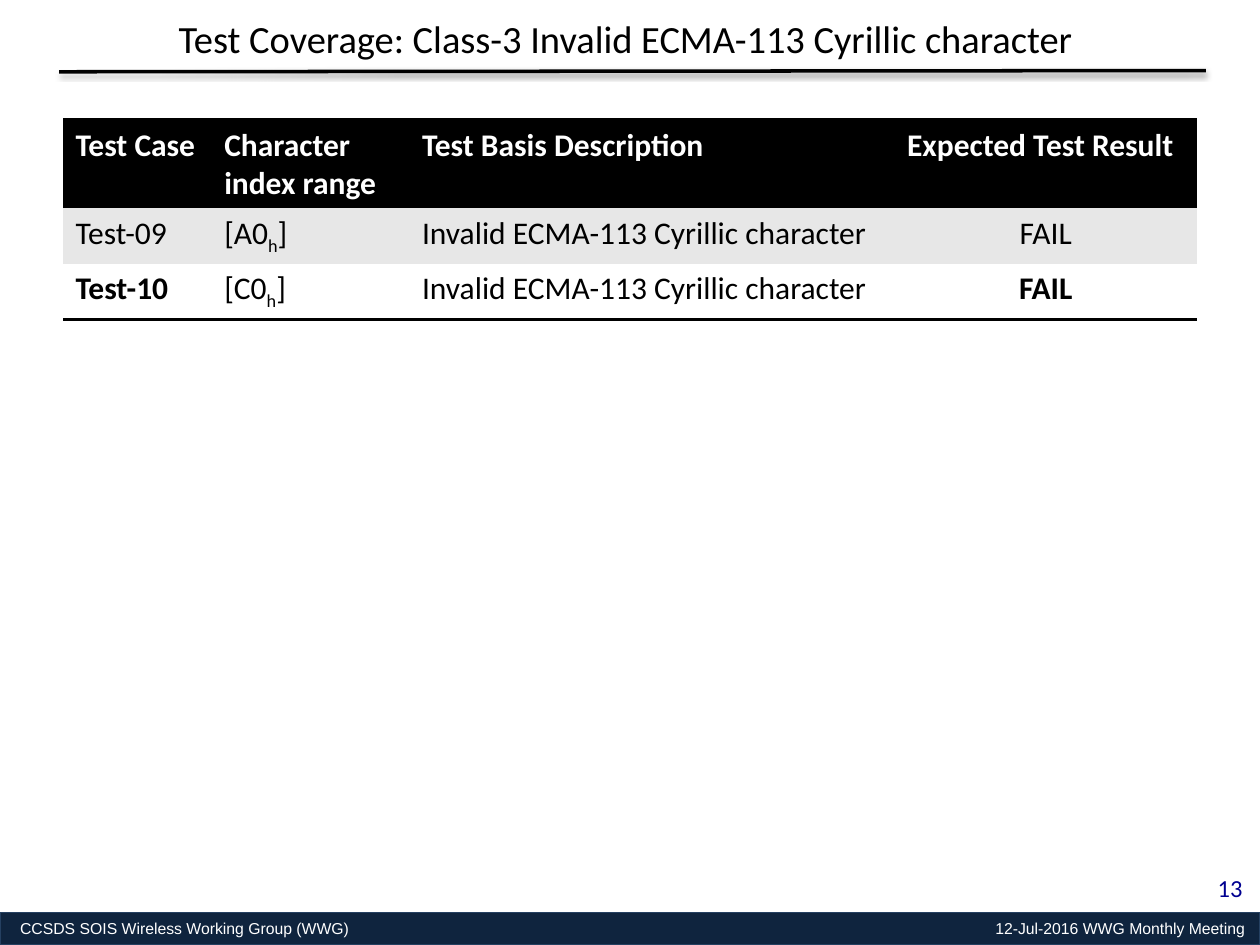
from dataclasses import dataclass

from lxml import etree
from pptx import Presentation
from pptx import util as u
from pptx.dml.color import RGBColor
from pptx.enum import shapes, text
from pptx.oxml import parse_xml
from pptx.oxml.ns import nsdecls, qn

BLACK = RGBColor(0x00, 0x00, 0x00)
WHITE = RGBColor(0xFF, 0xFF, 0xFF)
BAND = RGBColor(0xE7, 0xE7, 0xE7)
NAVY = RGBColor(0x0F, 0x24, 0x3E)
NAVY_EDGE = RGBColor(0x25, 0x40, 0x61)
PAGE_BLUE = RGBColor(0x00, 0x00, 0x90)
NO_GRID_STYLE = "{2D5ABB26-0587-4C30-8999-92F81FD0307C}"


@dataclass
class TestCase:
    name: str
    code: str
    basis: str
    result: str
    fill: RGBColor
    emphasised: bool = False


HEADERS = ["Test Case", "Character index range", "Test Basis Description",
           "Expected Test Result"]
CASES = [
    TestCase("Test-09", "A0", "Invalid ECMA-113 Cyrillic character", "FAIL", BAND),
    TestCase("Test-10", "C0", "Invalid ECMA-113 Cyrillic character", "FAIL", WHITE, True),
]
COL_WIDTHS = [1.18, 1.57, 3.85, 2.4]
ROW_HEIGHT = 0.41


def add_run(p, words: str, size: float, color: RGBColor, bold: bool = False,
            font: str = "Calibri"):
    r = p.add_run()
    r.text = words
    r.font.name, r.font.size, r.font.bold = font, u.Pt(size), bold
    r.font.color.rgb = color
    return r


def fill_cell(cell, fill: RGBColor):
    cell.fill.solid()
    cell.fill.fore_color.rgb = fill
    return cell.text_frame.paragraphs[0]


def add_border(cell, side: str) -> None:
    cell._tc.get_or_add_tcPr().insert(0, parse_xml(
        f'<a:{side} {nsdecls("a")} w="{u.Pt(2)}"><a:solidFill>'
        f'<a:srgbClr val="{BLACK}"/></a:solidFill></a:{side}>'))


def add_footer(slide) -> None:
    sp = slide.shapes.add_shape(shapes.MSO_SHAPE.RECTANGLE, u.Inches(0), u.Inches(7.24),
                                u.Inches(10), u.Inches(0.26))
    sp.shadow.inherit = False
    sp.fill.solid()
    sp.fill.fore_color.rgb = NAVY
    sp.line.color.rgb = NAVY_EDGE
    sp.line.width = u.Pt(0.75)
    tf = sp.text_frame
    tf.margin_left, tf.margin_right = u.Inches(0.16), u.Inches(0.11)
    tf.margin_top = tf.margin_bottom = u.Inches(0.06)
    p = tf.paragraphs[0]
    p.alignment = text.PP_ALIGN.LEFT
    # A right tab carries the meeting name to the far edge
    tabs = etree.SubElement(p._p.get_or_add_pPr(), qn("a:tabLst"))
    etree.SubElement(tabs, qn("a:tab"), pos=str(u.Inches(9.72)), algn="r")
    add_run(p, "CCSDS SOIS Wireless Working Group (WWG)\t12-Jul-2016 WWG Monthly Meeting",
            9, WHITE, font="Arial")


def add_page_number(slide) -> None:
    sp = slide.shapes.add_textbox(u.Inches(9.3), u.Inches(6.88),
                                  u.Inches(0.66), u.Inches(0.35))
    sp.text_frame.word_wrap = True
    p = sp.text_frame.paragraphs[0]
    p.alignment = text.PP_ALIGN.RIGHT
    add_run(p, "13", 14, PAGE_BLUE)


def add_title(slide) -> None:
    sp = slide.shapes.title
    sp.left, sp.top = u.Inches(0.5), u.Inches(0.08)
    sp.width, sp.height = u.Inches(9), u.Inches(0.45)
    tf = sp.text_frame
    tf.auto_size = text.MSO_AUTO_SIZE.NONE
    tf.vertical_anchor = text.MSO_ANCHOR.MIDDLE
    p = tf.paragraphs[0]
    p.alignment = text.PP_ALIGN.CENTER
    add_run(p, "Test Coverage: Class-3 Invalid ECMA-113 Cyrillic character ", 22, BLACK)


def add_title_rule(slide) -> None:
    line = slide.shapes.add_connector(shapes.MSO_CONNECTOR.STRAIGHT, u.Inches(0.47),
                                      u.Inches(0.57), u.Inches(9.57), u.Inches(0.56))
    line.line.color.rgb = BLACK
    line.line.width = u.Pt(2)
    line._element.spPr.append(parse_xml(
        f'<a:effectLst {nsdecls("a")}><a:outerShdw blurRad="{u.Pt(3.1)}" '
        f'dist="{u.Pt(1.6)}" dir="5400000" rotWithShape="0"><a:srgbClr val="{BLACK}">'
        '<a:alpha val="38000"/></a:srgbClr></a:outerShdw></a:effectLst>'))


def add_case_table(slide) -> None:
    frame = slide.shapes.add_table(len(CASES) + 1, len(HEADERS), u.Inches(0.5),
                                   u.Inches(0.95), u.Inches(9), u.Inches(1.51))
    table = frame.table
    table._tbl.tblPr.find(qn("a:tableStyleId")).text = NO_GRID_STYLE
    for col, width in zip(table.columns, COL_WIDTHS):
        col.width = u.Inches(width)
    for row in table.rows:
        row.height = u.Inches(ROW_HEIGHT)
    frame.height = u.Inches(1.51)

    # Header row
    for c, words in enumerate(HEADERS):
        add_run(fill_cell(table.cell(0, c), BLACK), words, 18, WHITE, True)
        add_border(table.cell(0, c), "lnT")

    # One row per test case
    for i, case in enumerate(CASES, start=1):
        name, index, basis, result = (fill_cell(table.cell(i, c), case.fill)
                                      for c in range(len(HEADERS)))
        add_run(name, case.name, 18, BLACK, case.emphasised)
        add_run(index, f"[{case.code}", 18, BLACK)
        r = add_run(index, "h", 18, BLACK)
        r._r.get_or_add_rPr().set("baseline", "-25000")
        add_run(index, "]", 18, BLACK)
        add_run(basis, case.basis, 18, BLACK)
        result.alignment = text.PP_ALIGN.CENTER
        add_run(result, case.result, 18, BLACK, case.emphasised)

    # Closing rule
    for c in range(len(HEADERS)):
        add_border(table.cell(len(CASES), c), "lnB")


def main() -> None:
    prs = Presentation()
    prs.slide_width, prs.slide_height = u.Inches(10), u.Inches(7.5)
    slide = prs.slides.add_slide(prs.slide_layouts[5])
    add_footer(slide)
    add_page_number(slide)
    add_title(slide)
    add_title_rule(slide)
    add_case_table(slide)
    prs.save("out.pptx")


if __name__ == "__main__":
    main()
